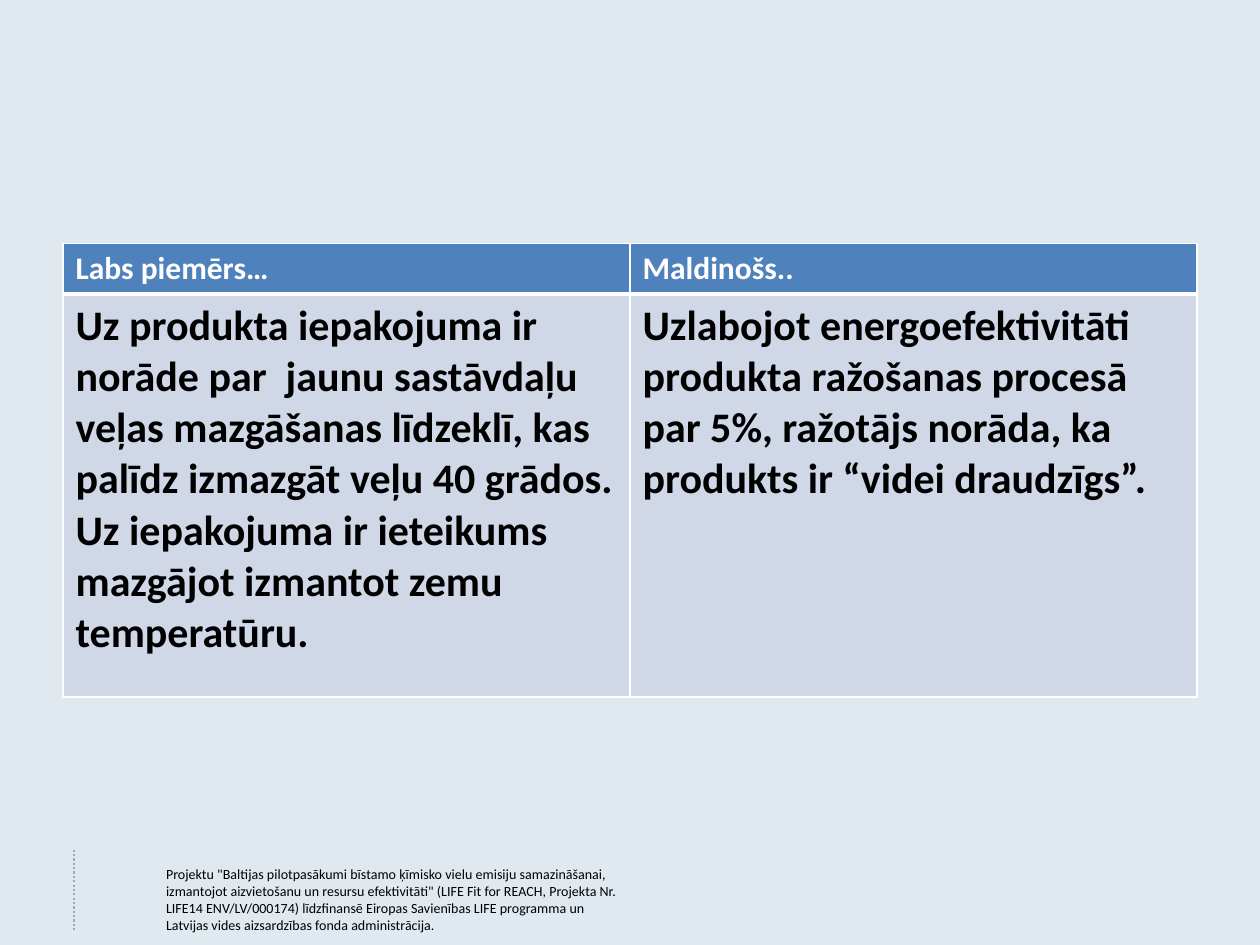
from lxml import etree
from pptx import Presentation
from pptx import util as u
from pptx.dml.color import RGBColor
from pptx.enum import dml, shapes, text
from pptx.oxml import ns

Pt = u.Pt
FONT = "Calibri"
HUES = {
    "back": "E0E9F0", "head": "4F81BD", "body": "D0D8E8",
    "white": "FFFFFF", "black": "000000", "rule": "A6A6A6",
}
HEADS = ["Labs piemērs…", "Maldinošs.."]
CASES = [
    "Uz produkta iepakojuma ir norāde par  jaunu sastāvdaļu veļas mazgāšanas "
    "līdzeklī, kas palīdz izmazgāt veļu 40 grādos. Uz iepakojuma ir ieteikums "
    "mazgājot izmantot zemu temperatūru.",
    "Uzlabojot energoefektivitāti produkta ražošanas procesā par 5%, "
    "ražotājs norāda, ka produkts ir “videi draudzīgs”.",
]
CREDIT = (
    'Projektu "Baltijas pilotpasākumi bīstamo ķīmisko vielu emisiju '
    'samazināšanai, izmantojot aizvietošanu un resursu efektivitāti" '
    "(LIFE Fit for REACH, Projekta Nr. LIFE14 ENV/LV/000174) līdzfinansē "
    "Eiropas Savienības LIFE programma un Latvijas vides aizsardzības fonda "
    "administrācija."
)


def hue(name):
    """Return the named colour."""
    return RGBColor.from_string(HUES[name])


def add_run(frame, words, size, tint, bold=False):
    """Add one formatted run to the first paragraph of a frame."""
    run = frame.paragraphs[0].add_run()
    run.text = words
    font = run.font
    font.name, font.size, font.bold = FONT, Pt(size), bold
    font.color.rgb = hue(tint)


def set_edges(cell, widths):
    """Give a cell white borders, with widths keyed by side."""
    props = cell._tc.get_or_add_tcPr()
    for spot, side in enumerate("LRTB"):
        edge = etree.Element(ns.qn(f"a:ln{side}"), w=str(Pt(widths[side])))
        fill = etree.SubElement(edge, ns.qn("a:solidFill"))
        etree.SubElement(fill, ns.qn("a:srgbClr"), val=HUES["white"])
        props.insert(spot, edge)


def add_cases(slide, left, top, width, heights):
    """Place the table that compares good and misleading claims."""
    frame = slide.shapes.add_table(
        2, 2, Pt(left), Pt(top), Pt(width), Pt(sum(heights)))
    grid = frame.table
    looks = [(HEADS, 18, "white", "head"), (CASES, 24, "black", "body")]
    for row, (words, size, tint, fill) in enumerate(looks):
        grid.rows[row].height = Pt(heights[row])
        edges = {"L": 1, "R": 1, "T": (1, 3)[row], "B": (3, 1)[row]}
        for col, line in enumerate(words):
            cell = grid.cell(row, col)
            cell.fill.solid()
            cell.fill.fore_color.rgb = hue(fill)
            set_edges(cell, edges)
            add_run(cell.text_frame, line, size, tint, bold=True)


def add_foot(slide, left, top, height):
    """Place the dotted rule and the funding credit."""
    rule = slide.shapes.add_connector(
        shapes.MSO_CONNECTOR.STRAIGHT,
        Pt(left), Pt(top), Pt(left), Pt(top + height))
    rule.line.color.rgb = hue("rule")
    rule.line.width = Pt(1.25)
    rule.line.dash_style = dml.MSO_LINE.ROUND_DOT
    etree.SubElement(rule._element.spPr, ns.qn("a:effectLst"))
    box = slide.shapes.add_textbox(
        Pt(left + 45.4), Pt(top + 5.8), Pt(278), Pt(46))
    frame = box.text_frame
    frame.word_wrap = True
    frame.auto_size = text.MSO_AUTO_SIZE.SHAPE_TO_FIT_TEXT
    add_run(frame, CREDIT, 8, "black")


def main():
    """Build and save the slide."""
    deck = Presentation()
    deck.slide_width, deck.slide_height = Pt(720), Pt(540)
    slide = deck.slides.add_slide(deck.slide_layouts[6])
    slide.background.fill.solid()
    slide.background.fill.fore_color.rgb = hue("back")
    add_foot(slide, 42.4, 485.5, 46.5)
    add_cases(slide, 36, 139, 648, (29, 230.4))
    deck.save("out.pptx")


if __name__ == "__main__":
    main()
